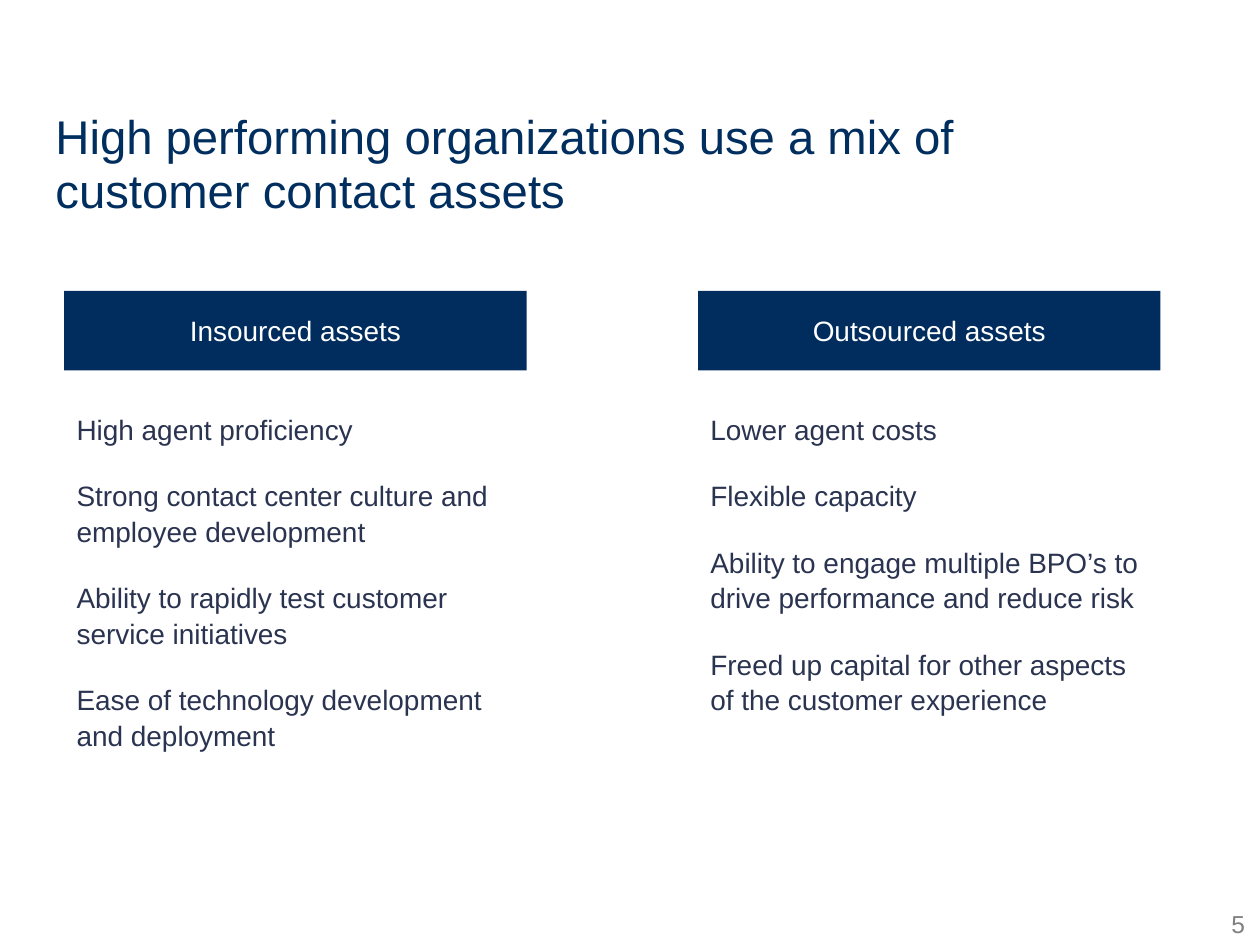
from pptx import Presentation
from pptx.dml.color import RGBColor
from pptx.enum.shapes import MSO_SHAPE as Shape
from pptx.enum.text import MSO_ANCHOR as Anchor, PP_ALIGN as Align
from pptx.util import Inches, Pt

NAVY, INK, GRAY, WHITE = "002D5E", "2A3350", "808080", "FFFFFF"
LEFT, COL_W, PITCH = 0.51, 3.67, 5.03
HEAD_TOP, HEAD_H, BODY_TOP, BODY_H = 2.31, 0.63, 3.21, 2.74
COLUMNS = [
    ("Insourced assets", [
        "High agent proficiency",
        "Strong contact center culture and employee development",
        "Ability to rapidly test customer service initiatives",
        "Ease of technology development and deployment",
    ]),
    ("Outsourced assets", [
        "Lower agent costs",
        "Flexible capacity",
        "Ability to engage multiple BPO’s to drive performance and reduce risk",
        "Freed up capital for other aspects of the customer experience",
    ]),
]


def rgb(value):
    """Turn a hex string into a colour."""
    return RGBColor.from_string(value)


def box(*lengths):
    """Turn lengths in inches into slide units."""
    return [Inches(n) for n in lengths]


def write(tf, lines, size, color, align=Align.LEFT, spacing=1.0, gap=0):
    """Fill a text frame with evenly spaced paragraphs."""
    tf.word_wrap = True
    tf.text = "\n".join(lines)
    for i, p in enumerate(tf.paragraphs):
        p.alignment = align
        p.line_spacing = spacing
        p.space_before = Pt(gap if i else 0)
        for r in p.runs:
            r.font.name = "Arial"
            r.font.size = Pt(size)
            r.font.color.rgb = rgb(color)


def add_title(s, text):
    """Place and format the title."""
    sp = s.shapes.title
    sp.left, sp.top, sp.width, sp.height = box(0.34, 0.84, 7.81, 0.56)
    sp.text_frame.vertical_anchor = Anchor.TOP
    write(sp.text_frame, [text], 27, "002E5E", spacing=0.94)


def add_header(s, left, text):
    """Add a filled column header."""
    sp = s.shapes.add_shape(Shape.RECTANGLE, *box(left, HEAD_TOP, COL_W, HEAD_H))
    sp.shadow.inherit = False
    sp.fill.solid()
    sp.fill.fore_color.rgb = rgb(NAVY)
    sp.line.fill.background()
    sp.text_frame.vertical_anchor = Anchor.MIDDLE
    write(sp.text_frame, [text], 16, WHITE, Align.CENTER)


def add_points(s, left, lines):
    """Add the points under a column header."""
    sp = s.shapes.add_textbox(*box(left, BODY_TOP, COL_W, BODY_H))
    write(sp.text_frame, lines, 16, INK, spacing=1.05, gap=18)


def add_page_number(s, number):
    """Add the page number in the bottom right corner."""
    tf = s.shapes.add_textbox(*box(9.64, 7.28, 0.24, 0.17)).text_frame
    tf.margin_left = tf.margin_right = tf.margin_top = tf.margin_bottom = 0
    write(tf, [number], 14, GRAY, Align.RIGHT, 0.7)


def main():
    """Build and save the slide."""
    prs = Presentation()
    prs.slide_width, prs.slide_height = box(10, 7.5)
    s = prs.slides.add_slide(prs.slide_layouts[5])
    add_title(s, "High performing organizations use a mix of customer contact assets")
    for i, (header, points) in enumerate(COLUMNS):
        left = LEFT + i * PITCH
        add_header(s, left, header)
        add_points(s, left, points)
    add_page_number(s, "5")
    prs.save("out.pptx")


if __name__ == "__main__":
    main()
